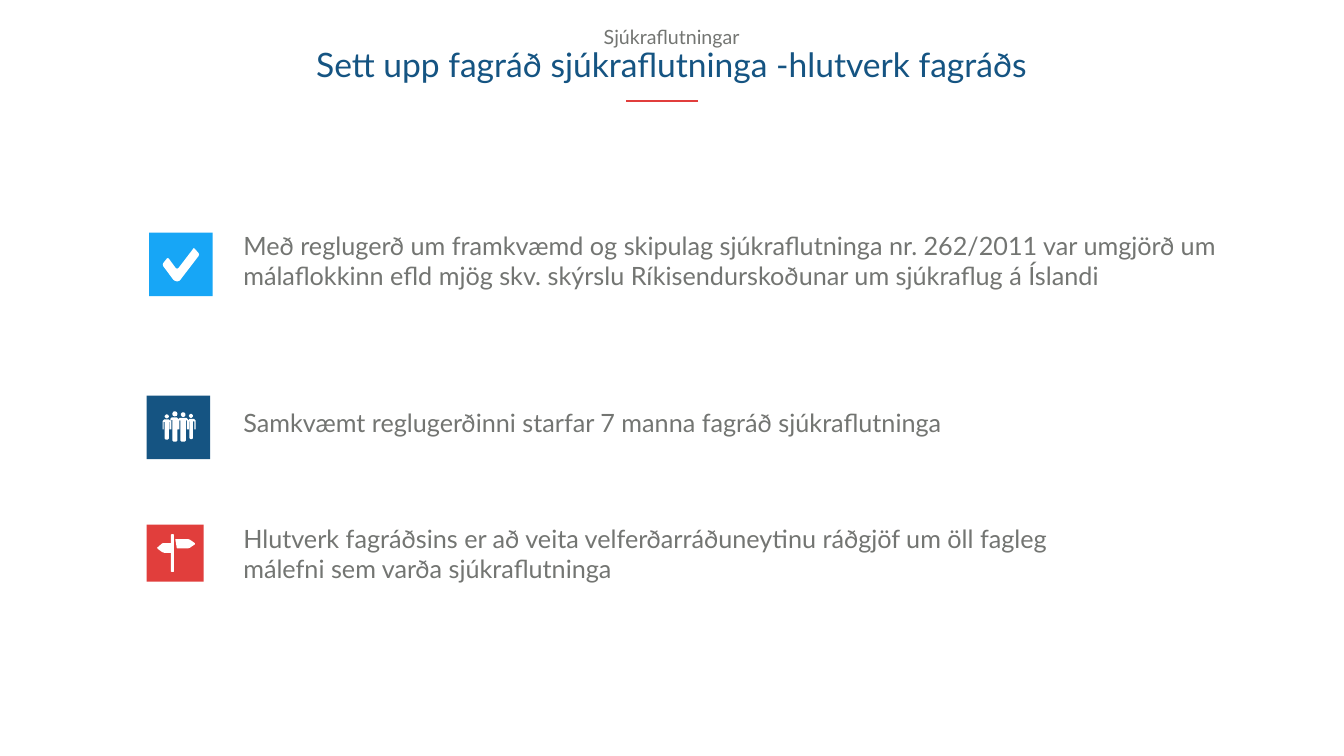
import math

import lxml.etree
import pptx
import pptx.dml.color
import pptx.enum.shapes
import pptx.enum.text
import pptx.oxml.ns
import pptx.util

Cm = pptx.util.Cm
Pt = pptx.util.Pt
RGBColor = pptx.dml.color.RGBColor
MSO_AUTO_SIZE = pptx.enum.text.MSO_AUTO_SIZE
PP_ALIGN = pptx.enum.text.PP_ALIGN

WHITE = RGBColor(0xFF, 0xFF, 0xFF)
NAVY = RGBColor(0x15, 0x54, 0x82)
SKY = RGBColor(0x17, 0xA6, 0xF6)
RED = RGBColor(0xE1, 0x3E, 0x3C)
GRAY = RGBColor(0x73, 0x75, 0x72)

ICON_UNIT = Cm(0.0254)
TEXT_LEFT = 12.01

BODY_FONT = {"name": "Lato", "size": Pt(36)}
KICKER_FONT = {"name": "Lato", "size": Pt(28)}
TITLE_FONT = {"name": "Lato", "size": Pt(48)}

CHECK_MARK = [[
    (27, 66), (24, 65), (21, 63), (1, 36), (0, 33), (1, 30), (8, 21), (10, 20),
    (12, 21), (26, 40), (28, 41), (31, 40), (60, 2), (62, 0), (64, 2), (71, 10),
    (72, 13), (71, 16), (35, 63), (33, 65), (30, 66),
]]
SIGNPOST = [
    [
        (32, 0), (29, 0), (27, 1), (27, 18), (14, 18), (11, 18), (9, 19), (1, 26),
        (0, 27), (1, 29), (9, 35), (11, 36), (14, 37), (27, 37), (27, 74), (29, 75),
        (32, 75), (33, 74), (33, 1),
    ],
    [
        (75, 18), (65, 11), (62, 10), (36, 10), (39, 28), (62, 28), (65, 27),
        (75, 20),
    ],
]


def circle(center_x, center_y, radius):
    angles = [math.tau * step / 24 for step in range(24)]
    return [
        (center_x + radius * math.cos(angle), center_y + radius * math.sin(angle))
        for angle in angles
    ]


def body(left, right, torso_left, torso_right, shoulder, foot):
    hand = 36
    armpit = shoulder + 5
    return [
        (left, shoulder + 3), (left + 3, shoulder), (right - 3, shoulder),
        (right, shoulder + 3), (right, hand), (right - 2, hand),
        (right - 2, armpit), (torso_right, armpit), (torso_right, foot - 2),
        (torso_right - 2, foot), (torso_left + 2, foot), (torso_left, foot - 2),
        (torso_left, armpit), (left + 2, armpit), (left + 2, hand), (left, hand),
    ]


def people():
    heads = [(8, 10, 4), (24, 5, 5), (40.5, 6.5, 4.5), (56, 9, 4)]
    bodies = [
        (0, 15, 4, 12, 16, 56),
        (15, 31, 19, 29, 12, 60),
        (31, 50, 35, 46, 13, 60),
        (50, 65, 53, 60, 15, 55),
    ]
    return [circle(*head) for head in heads] + [body(*figure) for figure in bodies]


def paint(shape, color):
    shape.shadow.inherit = False
    shape.fill.solid()
    shape.fill.fore_color.rgb = color
    shape.line.fill.background()


def add_tile(slide, left, top, side, color):
    tile = slide.shapes.add_shape(
        pptx.enum.shapes.MSO_SHAPE.RECTANGLE, Cm(left), Cm(top), Cm(side), Cm(side)
    )
    paint(tile, color)


def add_icon(slide, left, top, contours):
    builder = slide.shapes.build_freeform(*contours[0][0], scale=ICON_UNIT)
    for index, contour in enumerate(contours):
        if index:
            builder.move_to(*contour[0])
        builder.add_line_segments(contour[1:], close=True)
    paint(builder.convert_to_shape(Cm(left), Cm(top)), WHITE)


def write_paragraph(paragraph, text, font_format, color, **paragraph_format):
    for name, value in paragraph_format.items():
        setattr(paragraph, name, value)
    run = paragraph.add_run()
    run.text = text
    for name, value in font_format.items():
        setattr(run.font, name, value)
    run.font.color.rgb = color


def add_text_frame(slide, left, top, width, height, word_wrap):
    box = slide.shapes.add_textbox(Cm(left), Cm(top), Cm(width), Cm(height))
    frame_format = {"word_wrap": word_wrap, "auto_size": MSO_AUTO_SIZE.SHAPE_TO_FIT_TEXT}
    for name, value in frame_format.items():
        setattr(box.text_frame, name, value)
    return box.text_frame


def add_statement(slide, top, width, height, text, line_spacing=1.0):
    frame = add_text_frame(slide, TEXT_LEFT, top, width, height, True)
    write_paragraph(
        frame.paragraphs[0], text, BODY_FONT, GRAY, line_spacing=line_spacing
    )


def add_heading(slide, kicker, title):
    frame = add_text_frame(slide, 15.21, 1.27, 37.26, 3.18, False)
    layout = {"alignment": PP_ALIGN.CENTER, "line_spacing": 0.9}
    write_paragraph(frame.paragraphs[0], kicker, KICKER_FONT, GRAY, **layout)
    write_paragraph(frame.add_paragraph(), title, TITLE_FONT, NAVY, **layout)


def add_rule(slide, start_x, end_x, y):
    rule = slide.shapes.add_connector(
        pptx.enum.shapes.MSO_CONNECTOR.STRAIGHT, Cm(start_x), Cm(y), Cm(end_x), Cm(y)
    )
    rule.line.color.rgb = RED
    rule.line.width = Pt(3)
    lxml.etree.SubElement(
        rule._element.spPr, pptx.oxml.ns.qn("a:effectLst")
    )


def main():
    presentation = pptx.Presentation()
    presentation.slide_width = Cm(67.72)
    presentation.slide_height = Cm(38.1)
    slide = presentation.slides.add_slide(presentation.slide_layouts[6])

    add_heading(
        slide, "Sjúkraflutningar", "Sett upp fagráð sjúkraflutninga -hlutverk fagráðs"
    )
    add_rule(slide, 35.18, 31.55, 5.08)

    add_tile(slide, 7.52, 11.73, 3.2, SKY)
    add_icon(slide, 8.2, 12.5, CHECK_MARK)
    add_statement(
        slide, 11.48, 49.78, 3.33,
        "Með reglugerð um framkvæmd og skipulag sjúkraflutninga nr. 262/2011 var "
        "umgjörð um málaflokkinn efld mjög skv. skýrslu Ríkisendurskoðunar um "
        "sjúkraflug á Íslandi",
    )

    add_tile(slide, 7.39, 19.94, 3.2, NAVY)
    add_icon(slide, 8.2, 20.73, people())
    add_statement(
        slide, 20.24, 43.99, 1.98,
        "Samkvæmt reglugerðinni starfar 7 manna fagráð sjúkraflutninga",
        line_spacing=1.1,
    )

    add_tile(slide, 7.39, 26.44, 2.87, RED)
    add_icon(slide, 7.92, 26.92, SIGNPOST)
    add_statement(
        slide, 26.24, 43.99, 3.33,
        "Hlutverk fagráðsins er að veita velferðarráðuneytinu ráðgjöf um öll fagleg "
        "málefni sem varða sjúkraflutninga",
    )

    presentation.save("out.pptx")


if __name__ == "__main__":
    main()
